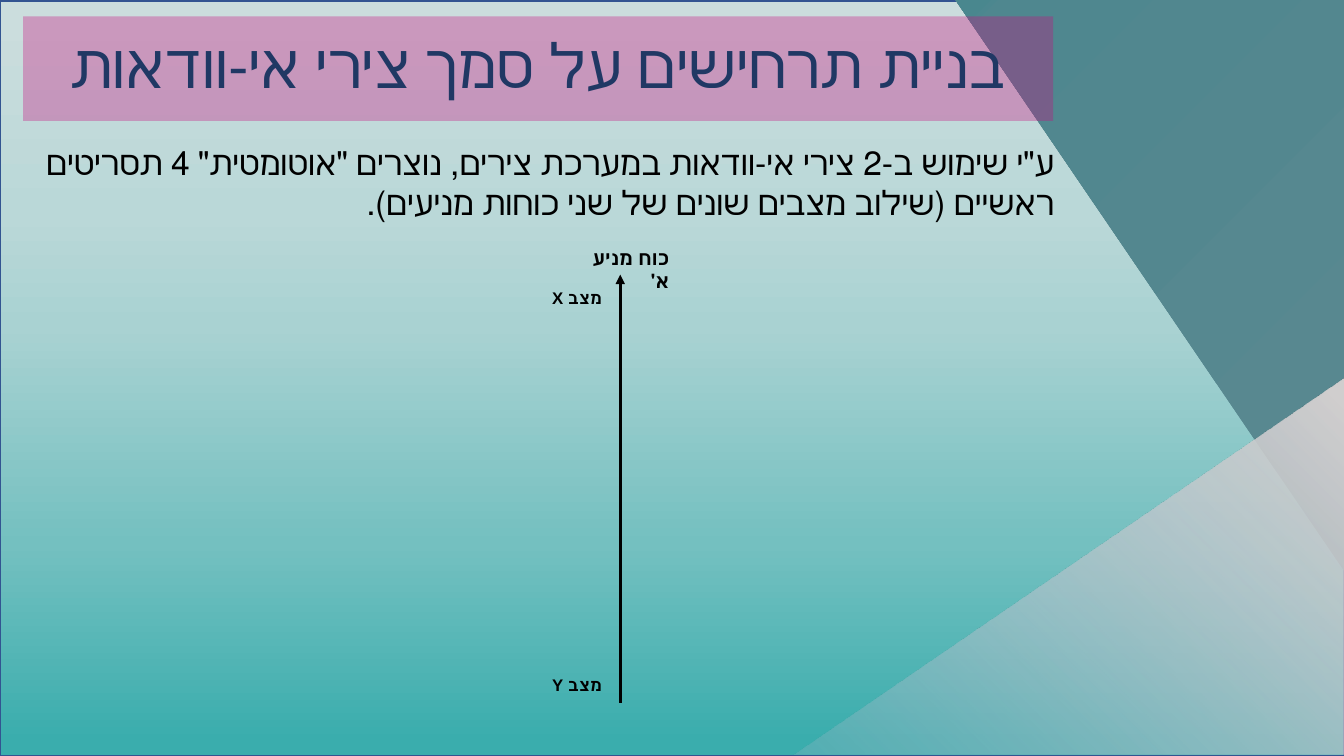
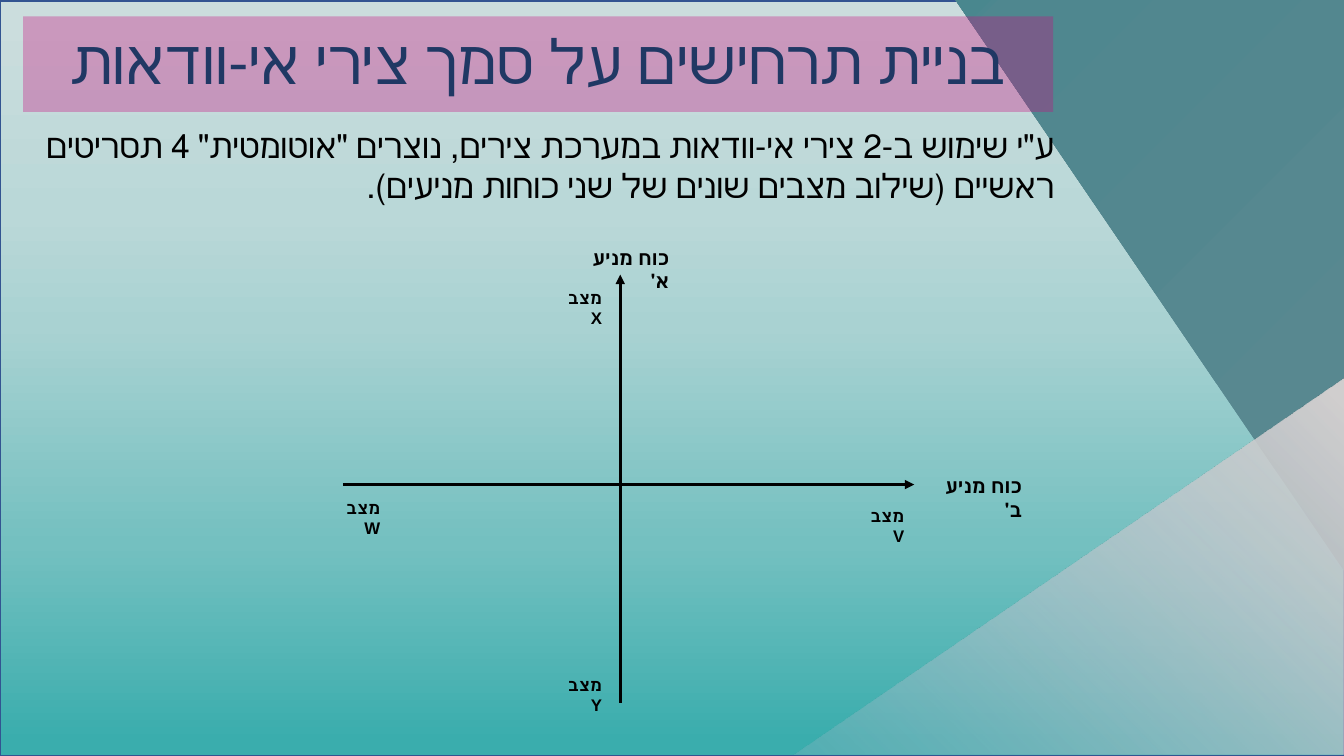
"""Build two slides that set out scenarios on axes of uncertainty."""
import copy

import pptx
import pptx.dml.color
import pptx.enum.lang
import pptx.enum.shapes
import pptx.enum.text
import pptx.oxml.ns
import pptx.util

Cm = pptx.util.Cm
qn = pptx.oxml.ns.qn
Kind = pptx.enum.shapes.MSO_SHAPE
Align = pptx.enum.text.PP_ALIGN
Fit = pptx.enum.text.MSO_AUTO_SIZE
Anchor = pptx.enum.text.MSO_ANCHOR


def tint(color, code, alpha=100):
    color.rgb = pptx.dml.color.RGBColor.from_string(code)
    if alpha < 100:
        node = color._xFill.find(qn("a:srgbClr"))
        node.append(node.makeelement(qn("a:alpha"), {"val": str(alpha * 1000)}))


def write(frame, text, size=24, name="Calibri", color="000000", bold=False,
          align=Align.RIGHT, anchor=Anchor.TOP, fit=Fit.SHAPE_TO_FIT_TEXT, space=1.0):
    frame.word_wrap = True
    frame.auto_size = fit
    frame.vertical_anchor = anchor
    para = frame.paragraphs[0]
    para.alignment = align
    para.line_spacing = space
    para._p.get_or_add_pPr().set("rtl", "1")
    run = para.add_run()
    run.text = text
    font = run.font
    font.size = pptx.util.Pt(size)
    font.name = name
    font.bold = bold
    font.language_id = pptx.enum.lang.MSO_LANGUAGE_ID.HEBREW
    tint(font.color, color)


deck = pptx.Presentation()
deck.slide_width, deck.slide_height = Cm(33.87), Cm(19.05)
layout = deck.slide_layouts[5]

head = "בניית תרחישים על סמך צירי אי-וודאות"
body = ("ע\"י שימוש ב-2 צירי אי-וודאות במערכת צירים, נוצרים \"אוטומטית\" 4 תסריטים "
        "ראשיים (שילוב מצבים שונים של שני כוחות מניעים).")

sea = [(2, "3AADAD", 100), (28, "74C0C0", 100), (57, "A9D2D2", 100),
       (72, "BAD8D8", 100), (98, "CBDDDD", 100)]
teal = [(2, "5A8890", 100), (95, "4F878F", 100), (97, "49878E", 100)]
mist = [(1, "ADB9CA", 22), (97, "D0CECE", 100)]
decor = [
    (Kind.RECTANGLE, (0, 0, 33.87, 19), 0, sea, 90, "325491"),
    (Kind.RECTANGLE, (0, 0.04, 33.87, 19), 0, sea, 90, "325491"),
    (Kind.ISOSCELES_TRIANGLE, (24.08, 0, 9.8, 14.4), 180, teal, 315, None),
    (Kind.ISOSCELES_TRIANGLE, (22.2, 7.32, 9.5, 13.89), 270, mist, 315, None),
]

up = (15.63, 17.71, 15.63, 6.92)
across = (8.64, 12.21, 23.04, 12.21)
force = ("כוח מניע א'", 14, (14.15, 6.07, 2.97, 0.86))
pages = [
    (2.64, 3.45, [up], [
        force,
        ("מצב X", 12, (13.31, 7.13, 2.11, 0.76)),
        ("מצב Y", 12, (13.31, 16.87, 2.11, 0.76)),
    ]),
    (2.41, 3.02, [up, across], [
        force,
        ("כוח מניע ב'", 14, (23.04, 11.83, 2.97, 0.86)),
        ("מצב V", 12, (21.39, 12.62, 1.65, 0.76)),
        ("מצב X", 12, (13.77, 7.13, 1.65, 0.76)),
        ("מצב Y", 12, (13.77, 16.87, 1.65, 0.76)),
        ("מצב W", 12, (8, 12.42, 1.83, 0.76)),
    ]),
]

slides = [deck.slides.add_slide(layout) for page in pages]

for rank, (kind, box, turn, stops, angle, edge) in enumerate(decor):
    shape = slides[0].shapes.add_shape(kind, *map(Cm, box))
    shape.shadow.inherit = False
    shape.rotation = turn
    if kind == Kind.ISOSCELES_TRIANGLE:
        shape.adjustments[0] = 0
    shape.fill.gradient()
    shape.fill.gradient_angle = angle
    ramp = shape.element.find(".//" + qn("a:gsLst"))
    for extra in stops[2:]:
        ramp.append(copy.deepcopy(ramp[0]))
    for stop, (place, code, alpha) in zip(shape.fill.gradient_stops, stops):
        stop.position = place / 100
        tint(stop.color, code, alpha)
    if edge:
        tint(shape.line.color, edge)
        shape.line.width = pptx.util.Pt(1)
    else:
        shape.line.fill.background()
    shape.element.nvSpPr.cNvPr.set("id", str(20 + rank))
    layout.shapes.element.insert(2 + rank, shape.element)

for slide, (height, top, axes, labels) in zip(slides, pages):
    title = slide.shapes.title
    title.left, title.top = Cm(0.58), Cm(0.41)
    title.width, title.height = Cm(25.96), Cm(height)
    title.fill.solid()
    tint(title.fill.fore_color, "CA0C7D", 33)
    write(title.text_frame, head, size=44, color="203864", align=Align.CENTER,
          anchor=Anchor.MIDDLE, fit=Fit.NONE, space=0.9)

    for ends in axes:
        axis = slide.shapes.add_connector(
            pptx.enum.shapes.MSO_CONNECTOR.STRAIGHT, *map(Cm, ends))
        tint(axis.line.color, "000000")
        axis.line.width = pptx.util.Pt(2.25)
        line = axis.line._get_or_add_ln()
        line.append(line.makeelement(qn("a:tailEnd"), {"type": "triangle"}))
        props = axis.element.spPr
        props.append(props.makeelement(qn("a:effectLst"), {}))

    for text, size, box in labels:
        label = slide.shapes.add_textbox(*map(Cm, box))
        write(label.text_frame, text, size=size, name="Arial", bold=True)

    intro = slide.shapes.add_textbox(Cm(0.58), Cm(top), Cm(26.24), Cm(2.31))
    write(intro.text_frame, body)

deck.save("out.pptx")
